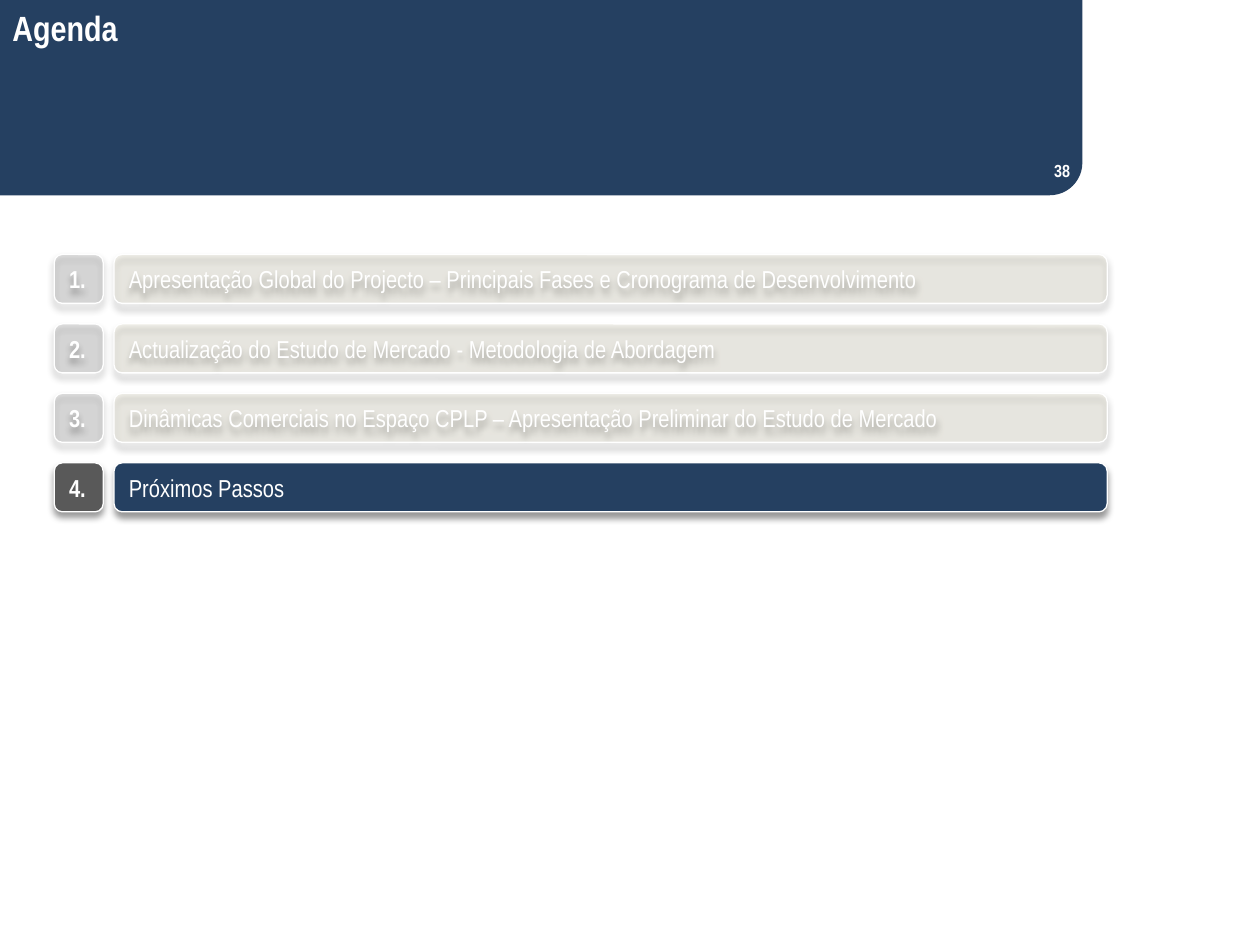
"""Build the agenda slide with the fourth topic highlighted."""
from dataclasses import dataclass

from lxml.etree import SubElement
from pptx import Presentation
from pptx.dml.color import RGBColor
from pptx.enum.shapes import MSO_SHAPE
from pptx.enum.text import MSO_ANCHOR, PP_ALIGN
from pptx.oxml.ns import qn
from pptx.util import Pt

TITLE = "Agenda"
PAGE_NUMBER = "38"
TOPICS = [
    "Apresentação Global do Projecto – Principais Fases e Cronograma de Desenvolvimento",
    "Actualização do Estudo de Mercado - Metodologia de Abordagem",
    "Dinâmicas Comerciais no Espaço CPLP – Apresentação Preliminar do Estudo de Mercado",
    "Próximos Passos",
]
CURRENT_TOPIC = 4

FIRST_TOP, ROW_PITCH, ROW_HEIGHT = 145.4, 39.7, 28
BADGE_LEFT, BADGE_WIDTH = 31, 28
BAR_LEFT, BAR_WIDTH = 65.2, 567.5


@dataclass(frozen=True)
class Theme:
    font: str = "Arial Narrow"
    navy: str = "254061"
    gray: str = "595959"
    sand: str = "C4BD97"
    white: str = "FFFFFF"
    shadow: str = "000000"
    title_size: int = 20
    topic_size: int = 14
    page_size: int = 10
    faded_alpha: int = 17
    shadow_alpha: int = 40


THEME = Theme()


def add_alpha(color_element, percent):
    SubElement(color_element, qn("a:alpha"), val=str(percent * 1000))


def write_text(shape, text, size, bold=False, align=PP_ALIGN.LEFT, anchor=MSO_ANCHOR.MIDDLE):
    frame = shape.text_frame
    frame.word_wrap = True
    frame.vertical_anchor = anchor
    paragraph = frame.paragraphs[0]
    paragraph.text = text
    paragraph.alignment = align
    paragraph.font.name = THEME.font
    paragraph.font.size = Pt(size)
    paragraph.font.bold = bold
    paragraph.font.color.rgb = RGBColor.from_string(THEME.white)


def add_filled_shape(slide, kind, box, color):
    shape = slide.shapes.add_shape(kind, *map(Pt, box))
    shape.shadow.inherit = False
    shape.fill.solid()
    shape.fill.fore_color.rgb = RGBColor.from_string(color)
    shape.line.fill.background()
    return shape


def add_tile(slide, box, color, text, bold, faded):
    tile = add_filled_shape(slide, MSO_SHAPE.ROUNDED_RECTANGLE, box, color)
    tile.line.color.rgb = RGBColor.from_string(THEME.white)
    tile.line.width = Pt(0.75)
    properties = tile.element.spPr
    if faded:
        add_alpha(properties.find(qn("a:solidFill"))[0], THEME.faded_alpha)
    shadow = SubElement(
        properties.find(qn("a:effectLst")), qn("a:outerShdw"),
        blurRad=str(Pt(4)), dist=str(Pt(3)), dir=str(90 * 60000), rotWithShape="0",
    )
    add_alpha(SubElement(shadow, qn("a:srgbClr"), val=THEME.shadow), THEME.shadow_alpha)
    write_text(tile, text, THEME.topic_size, bold)


def add_banner(slide):
    add_filled_shape(slide, MSO_SHAPE.ROUND_2_DIAG_RECTANGLE, (0, 0, 618.5, 111.6), THEME.navy)
    add_filled_shape(slide, MSO_SHAPE.RECTANGLE, (0, 0, 550, 64.8), THEME.navy)
    title = slide.shapes.add_textbox(Pt(0), Pt(0), Pt(317.5), Pt(31.7))
    write_text(title, TITLE, THEME.title_size, bold=True, anchor=MSO_ANCHOR.TOP)
    number = slide.shapes.add_textbox(Pt(450.7), Pt(82.8), Pt(167.8), Pt(28.8))
    write_text(number, PAGE_NUMBER, THEME.page_size, bold=True, align=PP_ALIGN.RIGHT)


def main():
    presentation = Presentation()
    presentation.slide_width, presentation.slide_height = Pt(720), Pt(540)
    slide = presentation.slides.add_slide(presentation.slide_layouts[6])
    add_banner(slide)
    for number, topic in enumerate(TOPICS, start=1):
        top = FIRST_TOP + (number - 1) * ROW_PITCH
        faded = number != CURRENT_TOPIC
        bar_color = THEME.sand if faded else THEME.navy
        add_tile(slide, (BAR_LEFT, top, BAR_WIDTH, ROW_HEIGHT), bar_color, topic, False, faded)
        badge_box = (BADGE_LEFT, top, BADGE_WIDTH, ROW_HEIGHT)
        add_tile(slide, badge_box, THEME.gray, f"{number}.", True, faded)
    presentation.save("out.pptx")


if __name__ == "__main__":
    main()
